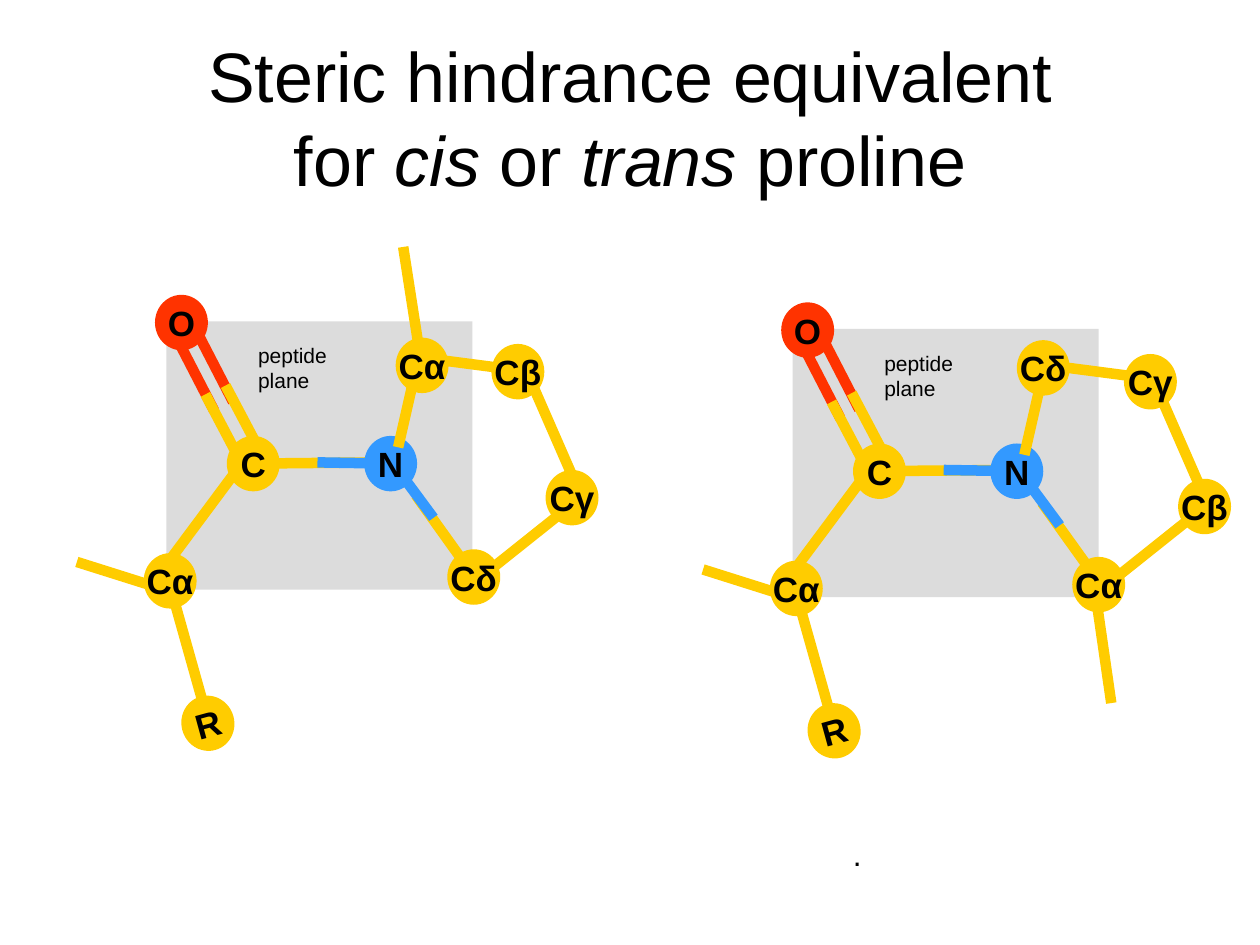
from dataclasses import dataclass

import pptx
import pptx.dml.color
import pptx.enum.shapes
import pptx.enum.text
import pptx.oxml.ns
import pptx.slide
import pptx.text.text
from lxml import etree
from pptx.util import Inches

YELLOW = pptx.dml.color.RGBColor(0xFF, 0xCC, 0x00)
RED = pptx.dml.color.RGBColor(0xFF, 0x33, 0x00)
BLUE = pptx.dml.color.RGBColor(0x33, 0x99, 0xFF)
GREY = pptx.dml.color.RGBColor(0xDC, 0xDC, 0xDC)
BLACK = pptx.dml.color.RGBColor(0, 0, 0)

ATOM_WIDTH, ATOM_HEIGHT = 0.42, 0.44


@dataclass(frozen=True)
class Atom:
    label: str
    left: float
    top: float
    color: pptx.dml.color.RGBColor = YELLOW
    rotation: float = 0


@dataclass(frozen=True)
class Bond:
    x1: float
    y1: float
    x2: float
    y2: float
    color: pptx.dml.color.RGBColor = YELLOW


@dataclass(frozen=True)
class Isomer:
    """The offset of one molecule, its ring atoms and the chain leaving the ring."""
    dx: float
    dy: float
    ring: tuple[Atom, ...]
    chain: Bond


# Positions are those of the left molecule; each isomer shifts them.
BACKBONE_BONDS = (
    Bond(1.53, 2.57, 1.85, 3.19, RED),
    Bond(1.79, 3.06, 2.08, 3.61),
    Bond(1.38, 2.64, 1.70, 3.26, RED),
    Bond(1.63, 3.13, 1.92, 3.68),
    Bond(1.18, 4.64, 0.61, 4.46),
    Bond(1.62, 5.61, 1.35, 4.65),
    Bond(1.27, 4.55, 1.91, 3.69),
    Bond(3.00, 3.67, 1.92, 3.68),
    Bond(3.13, 3.68, 2.52, 3.67, BLUE),
    Bond(4.62, 3.94, 3.83, 4.57),
    Bond(3.78, 4.60, 3.30, 3.93),
    Bond(3.44, 4.11, 3.10, 3.65, BLUE),
)
BACKBONE_ATOMS = (
    Atom("R", 1.44, 5.52, rotation=344.6),
    Atom("Cα", 1.14, 4.39),
    Atom("C", 1.80, 3.46),
    Atom("N", 2.89, 3.46, BLUE),
    Atom("O", 1.23, 2.34, RED),
)
# These bonds lie above the nitrogen atom.
RING_BONDS = (
    Bond(3.32, 2.85, 3.16, 3.55),
    Bond(4.20, 2.95, 3.28, 2.83),
    Bond(4.64, 4.00, 4.19, 2.97),
)
ISOMERS = (
    Isomer(0, 0,
           (Atom("Cα", 3.14, 2.68), Atom("Cβ", 3.90, 2.73),
            Atom("Cγ", 4.33, 3.73), Atom("Cδ", 3.55, 4.36)),
           Bond(3.32, 2.73, 3.20, 1.96)),
    Isomer(4.97, 0.06,
           (Atom("Cδ", 3.10, 2.64), Atom("Cγ", 3.95, 2.75),
            Atom("Cβ", 4.38, 3.74), Atom("Cα", 3.54, 4.36)),
           Bond(3.85, 5.52, 3.74, 4.76)),
)


def format_text(paragraph: pptx.text.text._Paragraph, size: float, bold: bool = False) -> None:
    paragraph.font.name = "Arial"
    paragraph.font.size = pptx.util.Pt(size)
    paragraph.font.bold = bold
    paragraph.font.color.rgb = BLACK


def add_title(slide: pptx.slide.Slide) -> None:
    title = slide.shapes.title
    title.left, title.top = Inches(0.5), Inches(0.3)
    title.width, title.height = Inches(9), Inches(1.25)
    title.text_frame.vertical_anchor = pptx.enum.text.MSO_ANCHOR.MIDDLE
    paragraph = title.text_frame.paragraphs[0]
    paragraph.alignment = pptx.enum.text.PP_ALIGN.CENTER
    paragraph.line_spacing = pptx.util.Pt(48)
    format_text(paragraph, 40)
    paragraph.add_run().text = "Steric hindrance equivalent"
    paragraph.add_line_break()
    for text, italic in (("for ", False), ("cis", True), (" or ", False),
                         ("trans", True), (" proline", False)):
        run = paragraph.add_run()
        run.text = text
        run.font.italic = italic


def add_label(slide: pptx.slide.Slide, text: str, left: float, top: float,
              width: float, height: float, size: float) -> None:
    box = slide.shapes.add_textbox(Inches(left), Inches(top), Inches(width), Inches(height))
    box.text_frame.word_wrap = False
    box.text_frame.text = text
    format_text(box.text_frame.paragraphs[0], size)


def add_filled_shape(slide: pptx.slide.Slide, kind: pptx.enum.shapes.MSO_SHAPE,
                     left: float, top: float, width: float, height: float,
                     color: pptx.dml.color.RGBColor) -> pptx.shapes.autoshape.Shape:
    shape = slide.shapes.add_shape(kind, Inches(left), Inches(top),
                                   Inches(width), Inches(height))
    shape.shadow.inherit = False
    shape.fill.solid()
    shape.fill.fore_color.rgb = color
    shape.line.fill.background()
    return shape


def add_bond(slide: pptx.slide.Slide, bond: Bond, dx: float, dy: float) -> None:
    line = slide.shapes.add_connector(
        pptx.enum.shapes.MSO_CONNECTOR.STRAIGHT,
        Inches(bond.x1 + dx), Inches(bond.y1 + dy),
        Inches(bond.x2 + dx), Inches(bond.y2 + dy))
    line.line.color.rgb = bond.color
    line.line.width = pptx.util.Pt(6)
    etree.SubElement(line._element.spPr, pptx.oxml.ns.qn("a:effectLst"))


def add_atom(slide: pptx.slide.Slide, atom: Atom, dx: float, dy: float) -> None:
    shape = add_filled_shape(slide, pptx.enum.shapes.MSO_SHAPE.OVAL, atom.left + dx,
                             atom.top + dy, ATOM_WIDTH, ATOM_HEIGHT, atom.color)
    shape.rotation = atom.rotation
    frame = shape.text_frame
    frame.margin_left = frame.margin_right = frame.margin_top = frame.margin_bottom = 0
    frame.word_wrap = False
    frame.vertical_anchor = pptx.enum.text.MSO_ANCHOR.MIDDLE
    frame.text = atom.label
    paragraph = frame.paragraphs[0]
    paragraph.alignment = pptx.enum.text.PP_ALIGN.CENTER
    format_text(paragraph, 20, bold=True)


def add_molecule(slide: pptx.slide.Slide, isomer: Isomer) -> None:
    dx, dy = isomer.dx, isomer.dy
    add_filled_shape(slide, pptx.enum.shapes.MSO_SHAPE.RECTANGLE,
                     1.32 + dx, 2.55 + dy, 2.43, 2.13, GREY)
    for bond in (*BACKBONE_BONDS, isomer.chain):
        add_bond(slide, bond, dx, dy)
    for atom in BACKBONE_ATOMS:
        add_atom(slide, atom, dx, dy)
    add_label(slide, "peptide\vplane", 1.95 + dx, 2.67 + dy, 1.2, 0.3, 12)
    for bond in RING_BONDS:
        add_bond(slide, bond, dx, dy)
    for atom in isomer.ring:
        add_atom(slide, atom, dx, dy)


def main() -> None:
    presentation = pptx.Presentation()
    presentation.slide_width, presentation.slide_height = Inches(10), Inches(7.5)
    slide = presentation.slides.add_slide(presentation.slide_layouts.get_by_name("Title Only"))
    add_title(slide)
    add_label(slide, ".", 6.67, 6.58, 0.27, 0.4, 18)
    for isomer in ISOMERS:
        add_molecule(slide, isomer)
    presentation.save("out.pptx")


if __name__ == "__main__":
    main()
